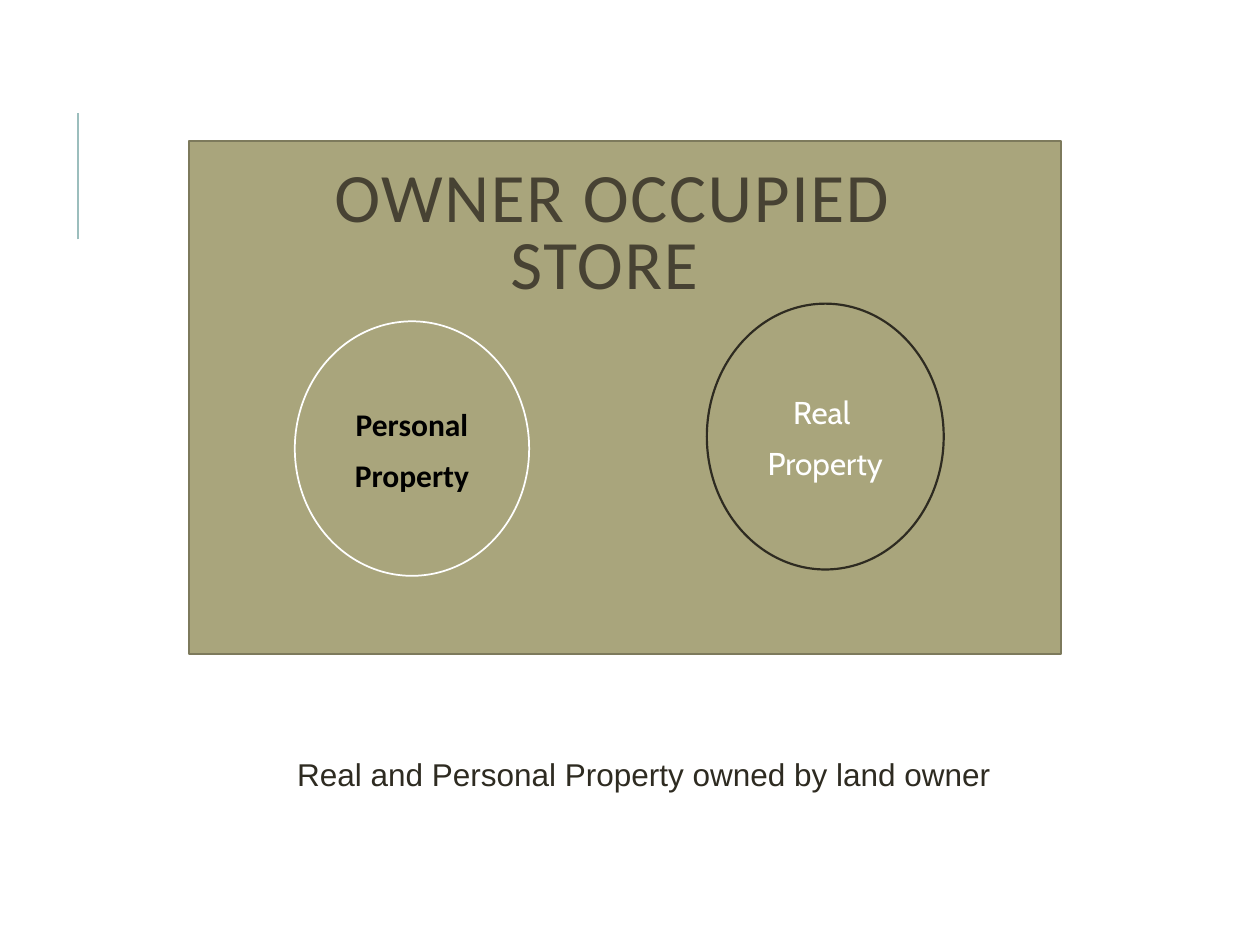
from lxml import etree
from pptx import Presentation
from pptx.dml.color import RGBColor
from pptx.enum.shapes import MSO_CONNECTOR, MSO_SHAPE
from pptx.enum.text import MSO_ANCHOR, MSO_AUTO_SIZE, PP_ALIGN
from pptx.oxml.ns import qn
from pptx.util import Inches, Pt

STRAIGHT = MSO_CONNECTOR.STRAIGHT
RECTANGLE = MSO_SHAPE.RECTANGLE
CIRCLE = MSO_SHAPE.FLOWCHART_CONNECTOR
MIDDLE = MSO_ANCHOR.MIDDLE
CENTER = PP_ALIGN.CENTER
NO_FIT = MSO_AUTO_SIZE.NONE
GROW = MSO_AUTO_SIZE.SHAPE_TO_FIT_TEXT


def color(hex_text):
    return RGBColor.from_string(hex_text)


def add_text(paragraph, text, font_name, size, hex_text, bold=False):
    paragraph.alignment = CENTER
    run = paragraph.add_run()
    run.text = text
    run.font.name = font_name
    run.font.size = Pt(size)
    run.font.bold = bold
    run.font.color.rgb = color(hex_text)
    return run


presentation = Presentation()
presentation.slide_width = Inches(10)
presentation.slide_height = Inches(7.5)
slide = presentation.slides.add_slide(presentation.slide_layouts[5])
shapes = slide.shapes

accent = shapes.add_connector(STRAIGHT, Inches(0.62), Inches(1.9), Inches(0.62), Inches(0.9))
accent.line.color.rgb = color("9CBEBD")
accent.line.width = Pt(1.5)
etree.SubElement(accent.element.spPr, qn("a:effectLst"))

store = shapes.add_shape(RECTANGLE, Inches(1.5), Inches(1.12), Inches(6.92), Inches(4.07))
store.shadow.inherit = False
store.fill.solid()
store.fill.fore_color.rgb = color("A9A57C")
store.line.color.rgb = color("7D7A5C")
store.line.width = Pt(1.25)

circles = [
    (2.34, 2.55, 1.86, 2.02, "FFFFFF", 1, ["Personal", "Property"], "Calibri", "000000", True),
    (5.61, 2.41, 1.88, 2.11, "2E2B21", 1.25, ["Real ", "Property"], "Cabin", "FFFFFF", False),
]
for left, top, width, height, outline, weight, words, font_name, text_color, bold in circles:
    circle = shapes.add_shape(CIRCLE, Inches(left), Inches(top), Inches(width), Inches(height))
    circle.shadow.inherit = False
    circle.fill.background()
    circle.line.color.rgb = color(outline)
    circle.line.width = Pt(weight)
    frame = circle.text_frame
    frame.word_wrap = True
    frame.vertical_anchor = MIDDLE
    frame.margin_left = frame.margin_right = Inches(0.07)
    frame.margin_top = frame.margin_bottom = Inches(0.04)
    for index, word in enumerate(words):
        paragraph = frame.add_paragraph() if index else frame.paragraphs[0]
        paragraph.line_spacing = 1.07
        paragraph.space_after = Pt(6)
        add_text(paragraph, word, font_name, 18, text_color, bold)

title = shapes.title
title.left, title.top = Inches(1.92), Inches(1.31)
title.width, title.height = Inches(5.75), Inches(1.13)
title.text_frame.word_wrap = True
title.text_frame.auto_size = NO_FIT
title.text_frame.vertical_anchor = MIDDLE
heading = title.text_frame.paragraphs[0]
heading.line_spacing = 0.8
heading_run = add_text(heading, " OWNER OCCUPIED STORE", "Calibri", 39.6, "474233")
heading_run.font._element.set("spc", "100")
title.element.getparent().append(title.element)

caption = shapes.add_textbox(Inches(2.23), Inches(5.94), Inches(5.76), Inches(0.4))
caption.text_frame.word_wrap = False
caption.text_frame.auto_size = GROW
add_text(caption.text_frame.paragraphs[0], "Real and Personal Property owned by land owner",
         "Arial", 18, "2E2B21")

presentation.save("out.pptx")
